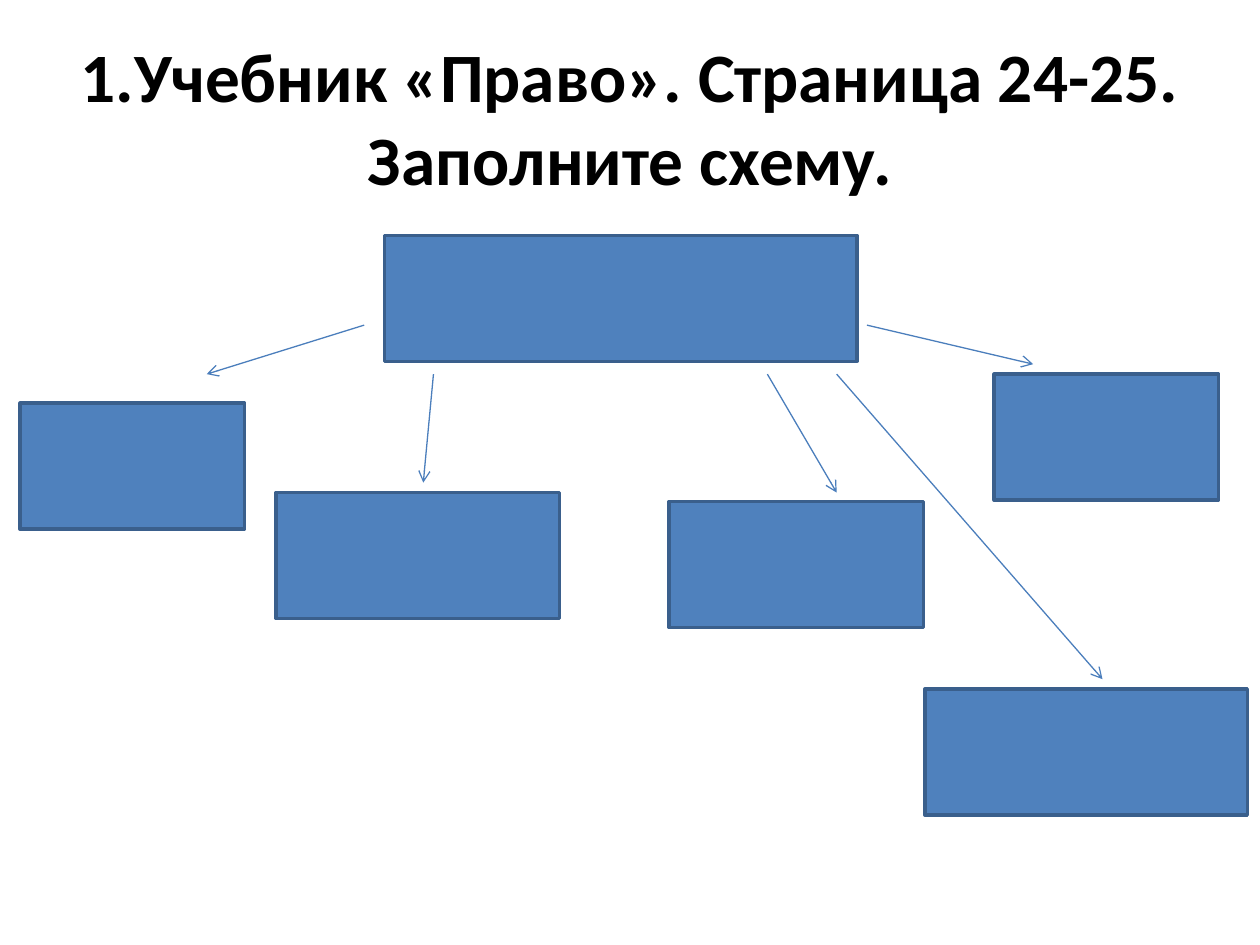
from dataclasses import dataclass

from lxml.etree import SubElement
from pptx import Presentation
from pptx.dml.color import RGBColor
from pptx.enum.shapes import MSO_CONNECTOR, MSO_SHAPE
from pptx.enum.text import MSO_ANCHOR, MSO_AUTO_SIZE, PP_ALIGN
from pptx.oxml.ns import qn
from pptx.util import Pt


@dataclass(frozen=True)
class Theme:
    font: str = "Calibri"
    title_size: float = 39.6
    title_color: RGBColor = RGBColor.from_string("000000")
    box_fill: RGBColor = RGBColor.from_string("4F81BD")
    box_border: RGBColor = RGBColor.from_string("3A5F8C")
    arrow_color: RGBColor = RGBColor.from_string("4B7EBC")
    border_width: float = 2
    arrow_width: float = 0.75


BOX_HEIGHT = 72

# Left, top, width
ROOT = (219.6, 134.6, 270)
BRANCHES = [
    (11.5, 230.4, 128.2),
    (157.7, 281.5, 162),
    (568.1, 213.8, 128.2),
    (382.3, 286.6, 145.4),
    (528.5, 393.8, 184.3),
]

# Arrows leave from beside the root box or from just below it
SIDE_Y = 185.8
BELOW_Y = 213.8
ARROWS = [
    ((208.1, SIDE_Y), (118.1, 213.8)),
    ((247.7, BELOW_Y), (241.9, 275.8)),
    ((438.5, BELOW_Y), (478.1, 281.5)),
    ((495.4, SIDE_Y), (590.4, 208.1)),
    ((478.1, BELOW_Y), (630, 388.1)),
]


class SchemeSlide:
    """Draws the elements of the scheme on one slide in one theme."""

    def __init__(self, slide, theme):
        self.slide = slide
        self.theme = theme

    def title(self, wording, left, top, width, height):
        heading = self.slide.shapes.title
        heading.left, heading.top = Pt(left), Pt(top)
        heading.width, heading.height = Pt(width), Pt(height)
        frame = heading.text_frame
        frame.text = wording
        frame.word_wrap = True
        frame.auto_size = MSO_AUTO_SIZE.NONE
        frame.vertical_anchor = MSO_ANCHOR.MIDDLE
        paragraph = frame.paragraphs[0]
        paragraph.alignment = PP_ALIGN.CENTER
        font = paragraph.runs[0].font
        font.name = self.theme.font
        font.size = Pt(self.theme.title_size)
        font.bold = True
        font.color.rgb = self.theme.title_color

    def box(self, left, top, width):
        box = self.slide.shapes.add_shape(
            MSO_SHAPE.RECTANGLE, Pt(left), Pt(top), Pt(width), Pt(BOX_HEIGHT)
        )
        box.shadow.inherit = False
        box.fill.solid()
        box.fill.fore_color.rgb = self.theme.box_fill
        box.line.color.rgb = self.theme.box_border
        box.line.width = Pt(self.theme.border_width)

    def arrow(self, start, end):
        arrow = self.slide.shapes.add_connector(
            MSO_CONNECTOR.STRAIGHT, *(Pt(value) for value in (*start, *end))
        )
        arrow.line.color.rgb = self.theme.arrow_color
        arrow.line.width = Pt(self.theme.arrow_width)
        SubElement(arrow.line._get_or_add_ln(), qn("a:tailEnd"), type="arrow")
        SubElement(arrow._element.spPr, qn("a:effectLst"))


def main():
    presentation = Presentation()
    presentation.slide_width, presentation.slide_height = Pt(720), Pt(540)
    title_only = presentation.slide_layouts[5]
    scheme = SchemeSlide(presentation.slides.add_slide(title_only), Theme())

    scheme.title(
        "1.Учебник «Право». Страница 24-25. Заполните схему.", 36, 21.6, 648, 90
    )
    for place in [ROOT, *BRANCHES]:
        scheme.box(*place)
    for start, end in ARROWS:
        scheme.arrow(start, end)

    presentation.save("out.pptx")


if __name__ == "__main__":
    main()
